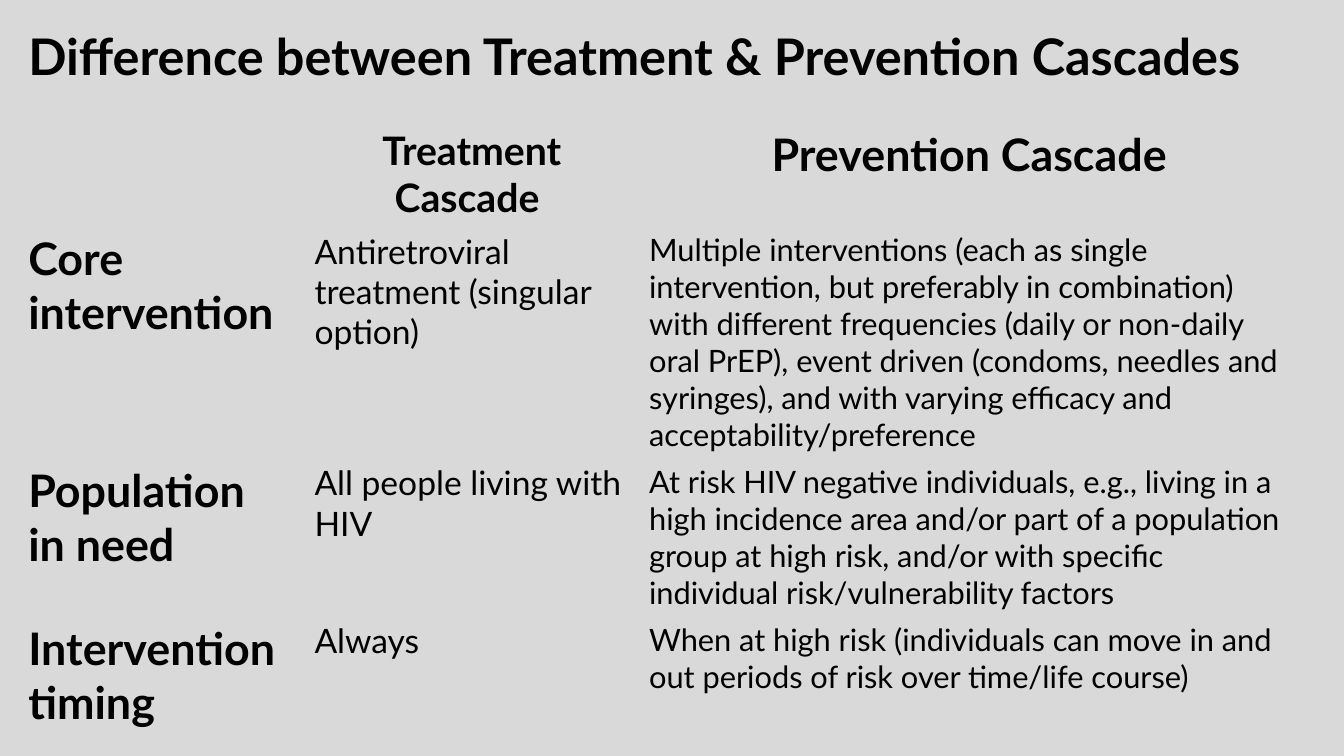
from dataclasses import dataclass

from pptx import Presentation
from pptx.dml.color import RGBColor
from pptx.enum.text import MSO_ANCHOR, MSO_AUTO_SIZE, PP_ALIGN
from pptx.oxml.ns import qn
from pptx.slide import Slide
from pptx.table import _Cell
from pptx.text.text import TextFrame
from pptx.util import Pt

LEFT, CENTER = PP_ALIGN.LEFT, PP_ALIGN.CENTER
TOP = MSO_ANCHOR.TOP
NO_FIT = MSO_AUTO_SIZE.NONE
PLAIN_STYLE = "{2D5ABB26-0587-4C30-8999-92F81FD0307C}"  # no fill, no grid
TITLE_ONLY = 5


@dataclass(frozen=True)
class Theme:
    font: str = "Lato"
    ink: RGBColor = RGBColor(0, 0, 0)
    back: RGBColor = RGBColor(0xD9, 0xD9, 0xD9)
    title: int = 36
    label: int = 32
    heads: tuple[int, ...] = (32, 28, 32)
    body: tuple[int, ...] = (32, 24, 22)


@dataclass(frozen=True)
class Row:
    label: str
    treat: str
    prevent: str


THEME = Theme()
EDGE = 13
WIDTHS = (204.5, 239, 479.5)
HEAD_H, BODY_H = 51, 92
TABLE_TOP = 87

HEAD = Row("", "Treatment Cascade ", "Prevention Cascade ")
ROWS = (
    Row(
        "Core intervention",
        "Antiretroviral treatment (singular option)",
        "Multiple interventions (each as single intervention, but preferably in "
        "combination) with different frequencies (daily or non-daily oral PrEP), "
        "event driven (condoms, needles and syringes), and with varying efficacy "
        "and acceptability/preference",
    ),
    Row(
        "Population\nin need",
        "All people living with HIV",
        "At risk HIV negative individuals, e.g., living in a high incidence area "
        "and/or part of a population group at high risk, and/or with specific "
        "individual risk/vulnerability factors",
    ),
    Row(
        "Intervention timing",
        "Always",
        "When at high risk (individuals can move in and out periods of risk over "
        "time/life course)",
    ),
)


def write(frame: TextFrame, text: str, size: int, bold: bool, align: PP_ALIGN) -> None:
    frame.text = text
    for para in frame.paragraphs:
        para.alignment = align
        font = para.font
        font.name, font.size, font.bold = THEME.font, Pt(size), bold
        font.color.rgb = THEME.ink


def add_title(slide: Slide, text: str) -> None:
    title = slide.shapes.title
    title.left, title.top = Pt(EDGE), Pt(14.5)
    title.width, title.height = Pt(943), Pt(51)
    frame = title.text_frame
    frame.auto_size, frame.word_wrap = NO_FIT, True
    frame.vertical_anchor = TOP
    write(frame, text, THEME.title, True, LEFT)


def fill_cell(cell: _Cell, text: str, size: int, bold: bool, align: PP_ALIGN) -> None:
    cell.fill.background()
    cell.vertical_anchor = TOP
    write(cell.text_frame, text, size, bold, align)


def add_grid(slide: Slide, head: Row, rows: tuple[Row, ...]) -> None:
    lines = (head, *rows)
    height = HEAD_H + BODY_H * len(rows)
    table = slide.shapes.add_table(
        len(lines), len(WIDTHS), Pt(EDGE), Pt(TABLE_TOP), Pt(sum(WIDTHS)), Pt(height)
    ).table
    table.first_row = table.horz_banding = False
    table._tbl.tblPr.find(qn("a:tableStyleId")).text = PLAIN_STYLE
    for column, width in zip(table.columns, WIDTHS):
        column.width = Pt(width)
    for r, line in enumerate(lines):
        is_head = r == 0
        table.rows[r].height = Pt(HEAD_H if is_head else BODY_H)
        sizes = THEME.heads if is_head else THEME.body
        texts = (line.label, line.treat, line.prevent)
        for c, (text, size) in enumerate(zip(texts, sizes)):
            align = CENTER if is_head else LEFT
            fill_cell(table.cell(r, c), text, size, is_head or c == 0, align)


def main() -> None:
    deck = Presentation()
    deck.slide_width, deck.slide_height = Pt(960), Pt(540)
    slide = deck.slides.add_slide(deck.slide_layouts[TITLE_ONLY])
    fill = slide.background.fill
    fill.solid()
    fill.fore_color.rgb = THEME.back
    add_title(slide, "Difference between Treatment & Prevention Cascades")
    add_grid(slide, HEAD, ROWS)
    deck.save("out.pptx")


if __name__ == "__main__":
    main()
